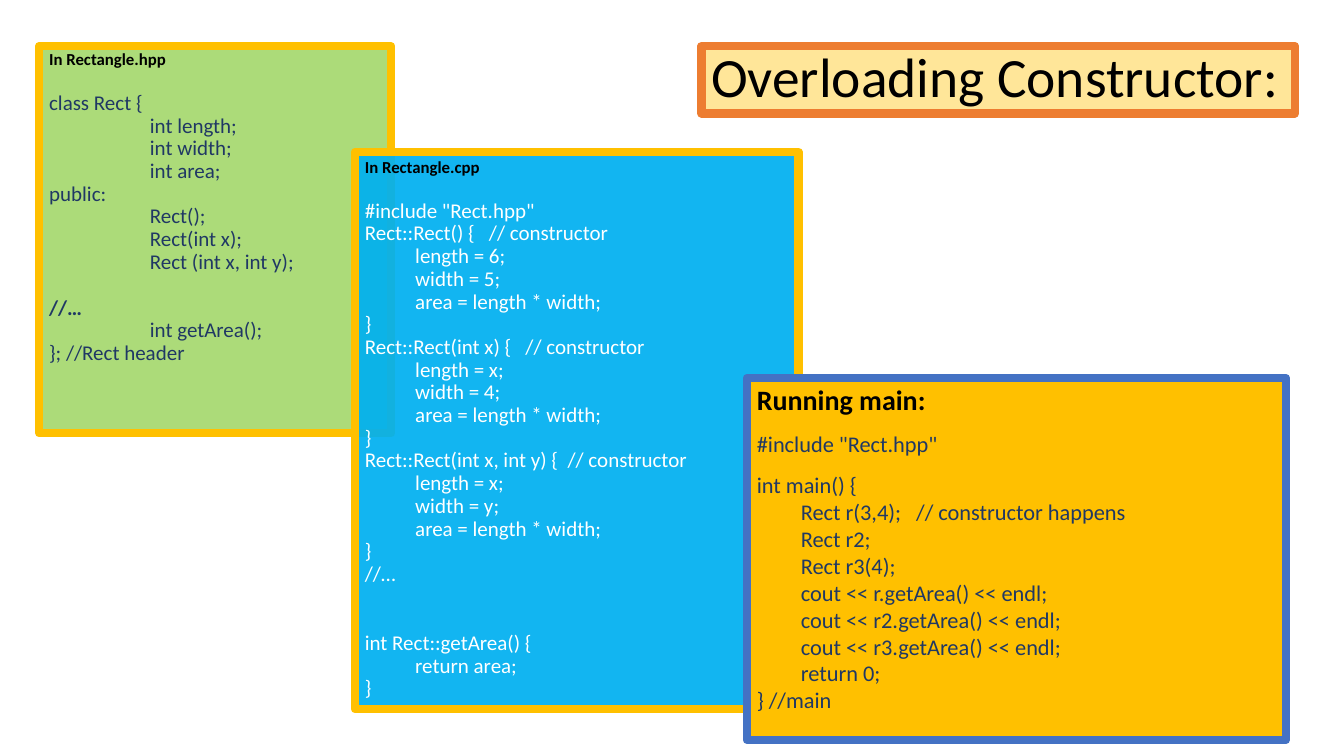
from dataclasses import dataclass, field

from lxml.etree import SubElement
from pptx import Presentation
from pptx.dml.color import RGBColor
from pptx.enum.shapes import MSO_SHAPE
from pptx.enum.text import MSO_ANCHOR, PP_ALIGN
from pptx.oxml.ns import qn
from pptx.util import Pt

BLACK = RGBColor(0x00, 0x00, 0x00)
WHITE = RGBColor(0xFF, 0xFF, 0xFF)
NAVY = RGBColor(0x20, 0x38, 0x64)
CREAM = RGBColor(0xFF, 0xE6, 0x99)
ORANGE = RGBColor(0xED, 0x7D, 0x31)
GREEN = RGBColor(0x92, 0xD0, 0x50)
SKY = RGBColor(0x00, 0xB0, 0xF0)
GOLD = RGBColor(0xFF, 0xC0, 0x00)
BLUE = RGBColor(0x44, 0x72, 0xC4)

HEADER = """class Rect {
\tint length;
\tint width;
\tint area;
public:
\tRect();
\tRect(int x);
\tRect (int x, int y);
//…
\tint getArea();
}; //Rect header"""

SOURCE = """#include "Rect.hpp"
Rect::Rect() {   // constructor
\tlength = 6;
\twidth = 5;
\tarea = length * width;
}
Rect::Rect(int x) {   // constructor
\tlength = x;
\twidth = 4;
\tarea = length * width;
}
Rect::Rect(int x, int y) {  // constructor
\tlength = x;
\twidth = y;
\tarea = length * width;
}
//…
int Rect::getArea() {
\treturn area;
}"""

MAIN = """#include "Rect.hpp"
int main() {
\tRect r(3,4);   // constructor happens
\tRect r2;
\tRect r3(4);
\tcout << r.getArea() << endl;
\tcout << r2.getArea() << endl;
\tcout << r3.getArea() << endl;
\treturn 0;
} //main"""


@dataclass
class CodeStyle:
    """Type settings of one code panel, with the gaps that precede certain lines."""
    heading_size: float
    size: float
    color: RGBColor
    indent: float
    heading_spacing: float = 1.0
    spacing: float = 0.9
    gaps: dict = field(default_factory=dict)
    bold_lines: tuple = ()


def add_panel(page, box, fill, border, opacity=100):
    """Draw a framed rectangle and return its shape."""
    panel = page.shapes.add_shape(MSO_SHAPE.RECTANGLE, *map(Pt, box))
    panel.shadow.inherit = False
    panel.fill.solid()
    panel.fill.fore_color.rgb = fill
    if opacity < 100:
        color = panel.fill._xPr.find(qn("a:solidFill"))[0]
        SubElement(color, qn("a:alpha"), val=str(opacity * 1000))
    panel.line.color.rgb = border
    panel.line.width = Pt(6)
    SubElement(panel.line._get_or_add_ln(), qn("a:round"))
    panel.text_frame.word_wrap = True
    panel.text_frame.vertical_anchor = MSO_ANCHOR.TOP
    return panel


def write_line(para, text, size, color, bold=False, spacing=1.0, gap=0, indent=0):
    """Put one run in a left-aligned paragraph."""
    para.alignment = PP_ALIGN.LEFT
    para.line_spacing = spacing
    para.space_before = Pt(gap)
    para._p.get_or_add_pPr().set("marL", str(Pt(indent)))
    span = para.add_run()
    span.text = text
    span.font.name = "Calibri"
    span.font.size = Pt(size)
    span.font.bold = bold
    span.font.color.rgb = color


def add_title(page, box, text):
    """Draw the framed slide title."""
    frame = add_panel(page, box, CREAM, ORANGE).text_frame
    frame.vertical_anchor = MSO_ANCHOR.MIDDLE
    write_line(frame.paragraphs[0], text, 39.6, BLACK, spacing=0.9)


def add_code(page, box, fill, border, opacity, heading, code, style):
    """Draw a panel with a bold heading above lines of code."""
    frame = add_panel(page, box, fill, border, opacity).text_frame
    write_line(frame.paragraphs[0], heading, style.heading_size, BLACK,
               bold=True, spacing=style.heading_spacing)
    for line in code.splitlines():
        text = line.lstrip("\t")
        write_line(frame.add_paragraph(), text, style.size, style.color,
                   bold=text in style.bold_lines, spacing=style.spacing,
                   gap=style.gaps.get(text, 0),
                   indent=style.indent if line.startswith("\t") else 0)


def main():
    """Build the slide and save it."""
    deck = Presentation()
    deck.slide_width, deck.slide_height = Pt(960), Pt(540)
    page = deck.slides.add_slide(deck.slide_layouts[6])
    add_title(page, (501, 33, 424, 48), "Overloading Constructor:")
    header_style = CodeStyle(12, 15, NAVY, 72, heading_spacing=0.9,
                             gaps={"class Rect {": 16.5, "//…": 16.5},
                             bold_lines=("//…",))
    source_style = CodeStyle(12, 15, WHITE, 36,
                             gaps={'#include "Rect.hpp"': 16.5,
                                   "int Rect::getArea() {": 33})
    main_style = CodeStyle(20, 16, NAVY, 31.5, spacing=1.0,
                           gaps={'#include "Rect.hpp"': 10, "int main() {": 10})
    add_code(page, (28, 33, 251.5, 276.5), GREEN, GOLD, 76,
             "In Rectangle.hpp", HEADER, header_style)
    add_code(page, (253.5, 108.5, 317, 398), SKY, GOLD, 93,
             "In Rectangle.cpp", SOURCE, source_style)
    add_code(page, (533.5, 270, 385, 258.5), GOLD, BLUE, 100,
             "Running main:", MAIN, main_style)
    deck.save("out.pptx")


if __name__ == "__main__":
    main()
